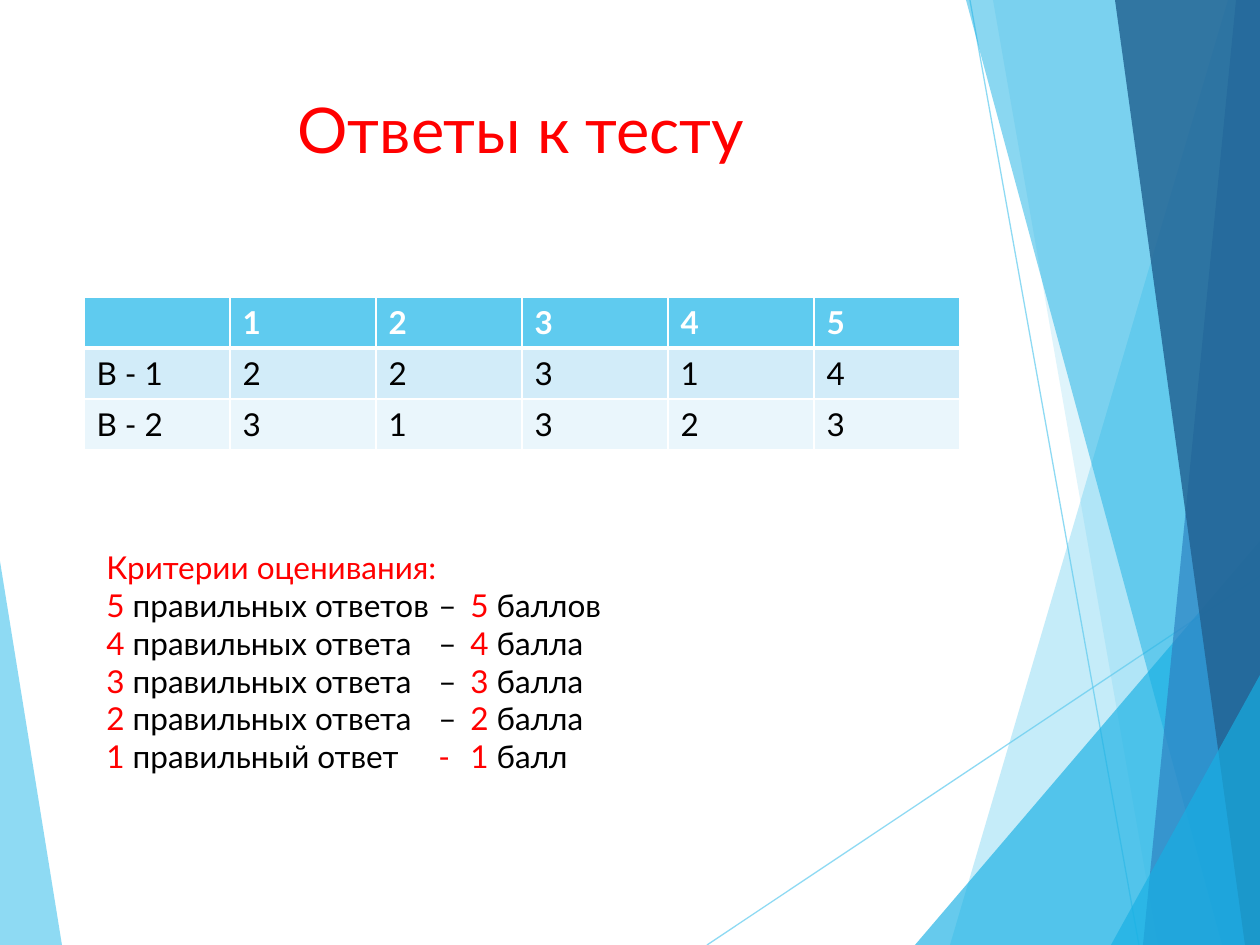
from dataclasses import dataclass

from lxml import etree
from pptx import Presentation
from pptx.dml.color import RGBColor
from pptx.enum.shapes import MSO_CONNECTOR
from pptx.enum.text import MSO_ANCHOR, MSO_AUTO_SIZE, PP_ALIGN
from pptx.oxml.ns import qn
from pptx.util import Pt

EMU_PER_PX = 914400 / 126
WIDTH, HEIGHT = 1260, 945
STRAIGHT = MSO_CONNECTOR.STRAIGHT
TOP, CENTER = MSO_ANCHOR.TOP, PP_ALIGN.CENTER
FIT_SHAPE = MSO_AUTO_SIZE.SHAPE_TO_FIT_TEXT
TITLE_ONLY = 5

FONT = "Lato"
RED, BLACK, WHITE = "FF0000", "000000", "FFFFFF"
SKY, AZURE, BLUE, NAVY = "5FCBEF", "17B0E4", "2E83C3", "226292"


@dataclass(frozen=True)
class Facet:
    points: tuple[tuple[int, int], ...]
    color: str
    opacity: int


@dataclass(frozen=True)
class Ray:
    start: tuple[int, int]
    end: tuple[int, int]


@dataclass(frozen=True)
class Criterion:
    count: str
    answers: str
    dash: str
    dash_color: str
    points: str


def right_band(top: int, bottom: int, color: str, opacity: int) -> Facet:
    """Full-height band between a slanted left edge and the slide's right edge."""
    return Facet(((top, 0), (bottom, HEIGHT), (WIDTH, HEIGHT), (WIDTH, 0)), color, opacity)


def right_corner(left: int, top: int) -> Facet:
    """Triangle in the bottom right corner."""
    return Facet(((left, HEIGHT), (WIDTH, top), (WIDTH, HEIGHT)), AZURE, 66)


LEFT_FACET = Facet(((0, 561), (62, HEIGHT), (0, HEIGHT)), SKY, 70)
RAYS = (Ray((707, HEIGHT), (WIDTH, 576)), Ray((970, 0), (1139, HEIGHT)))
RIGHT_FACETS = (
    right_band(1228, 950, SKY, 36),
    right_band(993, 1158, SKY, 20),
    right_corner(915, 541),
    right_band(966, 1222, AZURE, 50),
    right_band(1236, 1143, BLUE, 70),
    right_band(1115, 1245, NAVY, 82),
    right_corner(1111, 675),
)
ANSWERS = (
    ("", "1", "2", "3", "4", "5"),
    ("В - 1", "2", "2", "3", "1", "4"),
    ("В - 2", "3", "1", "3", "2", "3"),
)
ROW_FILLS = (SKY, "D2ECF9", "EAF6FC")
CRITERIA = (
    Criterion("5", "правильных ответов", "–", BLACK, "баллов"),
    Criterion("4", "правильных ответа", "–", BLACK, "балла"),
    Criterion("3", "правильных ответа", "–", BLACK, "балла"),
    Criterion("2", "правильных ответа", "–", BLACK, "балла"),
    Criterion("1", "правильный ответ", "-", RED, "балл"),
)
CRITERIA_TABS = (332, 364)


def px(length: int) -> int:
    return round(length * EMU_PER_PX)


def rgb(color: str) -> RGBColor:
    return RGBColor.from_string(color)


def set_opacity(fill, percent: int) -> None:
    color = fill._xPr.find(qn("a:solidFill"))[0]
    etree.SubElement(color, qn("a:alpha"), val=str(percent * 1000))


def add_run(paragraph, text: str, size: int, color: str, bold: bool = False) -> None:
    run = paragraph.add_run()
    run.text = text
    run.font.name = FONT
    run.font.size = Pt(size)
    run.font.bold = bold
    run.font.color.rgb = rgb(color)


def draw_facet(slide, facet: Facet) -> None:
    start, *others = facet.points
    builder = slide.shapes.build_freeform(*start, scale=EMU_PER_PX)
    builder.add_line_segments(others, close=True)
    shape = builder.convert_to_shape()
    shape.shadow.inherit = False
    shape.fill.solid()
    shape.fill.fore_color.rgb = rgb(facet.color)
    set_opacity(shape.fill, facet.opacity)
    shape.line.fill.background()


def draw_ray(slide, ray: Ray) -> None:
    ends = [px(value) for value in ray.start + ray.end]
    connector = slide.shapes.add_connector(STRAIGHT, *ends)
    connector.line.width = Pt(0.75)
    connector.line.color.rgb = rgb(SKY)
    set_opacity(connector.line.fill, 70)
    etree.SubElement(connector._element.spPr, qn("a:effectLst"))


def draw_title(slide) -> None:
    title = slide.shapes.title
    title.left, title.top, title.width, title.height = map(px, (84, 84, 874, 182))
    title.text_frame.vertical_anchor = TOP
    paragraph = title.text_frame.paragraphs[0]
    paragraph.alignment = CENTER
    add_run(paragraph, "Ответы к тесту", 36, RED)


def set_borders(cell, top: int, bottom: int) -> None:
    """White borders; top and bottom widths are in points."""
    properties = cell._tc.get_or_add_tcPr()
    for side, width in (("L", 1), ("R", 1), ("T", top), ("B", bottom)):
        line = etree.SubElement(properties, qn(f"a:ln{side}"), w=str(Pt(width)))
        fill = etree.SubElement(line, qn("a:solidFill"))
        etree.SubElement(fill, qn("a:srgbClr"), val=WHITE)


def draw_answers(slide) -> None:
    rows, columns = len(ANSWERS), len(ANSWERS[0])
    frame = slide.shapes.add_table(
        rows, columns, px(84), px(297), px(146 * columns), px(51 * rows)
    )
    table = frame.table
    for row, values in enumerate(ANSWERS):
        header = row == 0
        for column, value in enumerate(values):
            cell = table.cell(row, column)
            set_borders(cell, 3 if row == 1 else 1, 3 if header else 1)
            cell.fill.solid()
            cell.fill.fore_color.rgb = rgb(ROW_FILLS[row])
            if value:
                paragraph = cell.text_frame.paragraphs[0]
                add_run(paragraph, value, 18, WHITE if header else BLACK, header)


def set_tabs(paragraph, positions: tuple[int, ...]) -> None:
    tabs = etree.SubElement(paragraph._p.get_or_add_pPr(), qn("a:tabLst"))
    for position in positions:
        etree.SubElement(tabs, qn("a:tab"), pos=str(px(position)), algn="l")


def draw_criteria(slide) -> None:
    box = slide.shapes.add_textbox(px(94), px(542), px(630), px(242))
    text_frame = box.text_frame
    text_frame.word_wrap = True
    text_frame.auto_size = FIT_SHAPE
    add_run(text_frame.paragraphs[0], "Критерии оценивания:", 18, RED)
    for criterion in CRITERIA:
        paragraph = text_frame.add_paragraph()
        set_tabs(paragraph, CRITERIA_TABS)
        add_run(paragraph, f"{criterion.count} ", 18, RED)
        add_run(paragraph, f"{criterion.answers}\t", 18, BLACK)
        add_run(paragraph, f"{criterion.dash}\t", 18, criterion.dash_color)
        add_run(paragraph, f"{criterion.count} ", 18, RED)
        add_run(paragraph, criterion.points, 18, BLACK)


def main() -> None:
    presentation = Presentation()
    presentation.slide_width, presentation.slide_height = px(WIDTH), px(HEIGHT)
    slide = presentation.slides.add_slide(presentation.slide_layouts[TITLE_ONLY])
    draw_title(slide)
    draw_facet(slide, LEFT_FACET)
    for ray in RAYS:
        draw_ray(slide, ray)
    for facet in RIGHT_FACETS:
        draw_facet(slide, facet)
    draw_answers(slide)
    draw_criteria(slide)
    presentation.save("out.pptx")


if __name__ == "__main__":
    main()
